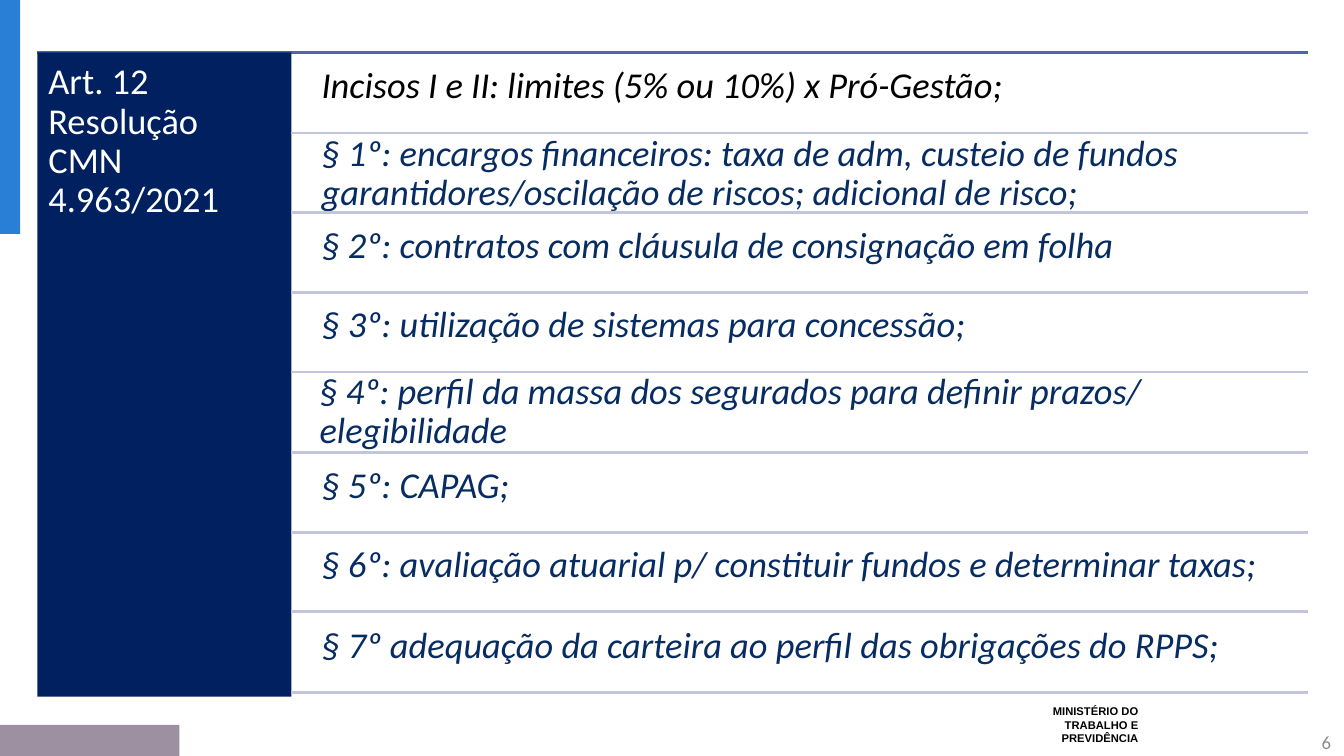
"""Slide on Art. 12 of Resolução CMN 4.963/2021 and its paragraphs."""
import pptx
import pptx.util
import pptx.dml.color
import pptx.enum.shapes
import pptx.enum.text
import lxml.etree

PX = 9144
ALIGN = pptx.enum.text.PP_ALIGN
ANCHOR = pptx.enum.text.MSO_ANCHOR
COLORS = {
    "blue": "297FD5",
    "mauve": "9D90A0",
    "navy": "002060",
    "ink": "072C62",
    "rule": "4A66AC",
    "divider": "C1C6DB",
    "gray": "8C8C8C",
    "black": "000000",
    "white": "FFFFFF",
}
COLORS = {k: pptx.dml.color.RGBColor.from_string(v) for k, v in COLORS.items()}

prs = pptx.Presentation()
prs.slide_width = 1333 * PX
prs.slide_height = 750 * PX
s = prs.slides.add_slide(prs.slide_layouts[6])


def write(sp, lines, size, color, font="Calibri", align=ALIGN.LEFT,
          anchor=ANCHOR.TOP, inset=None, spacing=None, bold=False, italic=False):
    tf = sp.text_frame
    tf.word_wrap = True
    tf.vertical_anchor = anchor
    if inset is not None:
        tf.margin_left = tf.margin_top = tf.margin_right = tf.margin_bottom = inset * PX
    tf.text = "\n".join(lines)
    for p in tf.paragraphs:
        p.alignment = align
        p.line_spacing = spacing
        p.font.name = font
        p.font.size = pptx.util.Pt(size)
        p.font.bold = bold
        p.font.italic = italic
        p.font.color.rgb = COLORS[color]


def add_line(x1, x2, y, color):
    c = s.shapes.add_connector(pptx.enum.shapes.MSO_CONNECTOR.STRAIGHT,
                               x1 * PX, y * PX, x2 * PX, y * PX)
    c.line.color.rgb = COLORS[color]
    c.line.width = pptx.util.Pt(2)
    lxml.etree.SubElement(c.element.spPr, pptx.oxml.ns.qn("a:effectLst"))


add_line(37, 1297, 52, "rule")

bars = [
    (0, 0, 20, 232, "blue"),
    (0, 719, 178, 31, "mauve"),
    (37, 52, 252, 639, "navy"),
]
for x, y, w, h, color in bars:
    sp = s.shapes.add_shape(pptx.enum.shapes.MSO_SHAPE.RECTANGLE,
                            x * PX, y * PX, w * PX, h * PX)
    sp.shadow.inherit = False
    sp.fill.solid()
    sp.fill.fore_color.rgb = COLORS[color]
    sp.line.fill.background()
write(sp, ["Art. 12 Resolução CMN 4.963/2021"], 26, "white", inset=11, spacing=0.9)

rows = [
    ("Incisos I e II: limites (5% ou 10%) x Pró-Gestão;", "black", 0, 0),
    ("§ 1º: encargos financeiros: taxa de adm, custeio de fundos "
     "garantidores/oscilação de riscos; adicional de risco;", "ink", 0, -12),
    ("§ 2º: contratos com cláusula de consignação em folha", "ink", 0, 0),
    ("§ 3º: utilização de sistemas para concessão;", "ink", 0, 0),
    ("§ 4º: perfil da massa dos segurados para definir prazos/ elegibilidade",
     "ink", -2, -14),
    ("§ 5º: CAPAG;", "ink", 0, 0),
    ("§ 6º: avaliação atuarial p/ constituir fundos e determinar taxas;", "ink", 0, 0),
    ("§ 7º adequação da carteira ao perfil das obrigações do RPPS;", "ink", 0, 0),
]
for i, (text, color, dx, dy) in enumerate(rows):
    top = 56 + i * 555 // 7
    sp = s.shapes.add_textbox((308 + dx) * PX, (top + dy) * PX, 989 * PX, 76 * PX)
    write(sp, [text], 26, color, inset=11, spacing=0.9, italic=True)
    add_line(289, 1297, top + 76, "divider")

sp = s.shapes.add_textbox(985 * PX, 694 * PX, 154 * PX, 50 * PX)
write(sp, ["MINISTÉRIO DO", "TRABALHO E PREVIDÊNCIA"], 8, "black",
      font="Arial", align=ALIGN.RIGHT, bold=True)

sp = s.shapes.add_textbox(1264 * PX, 716 * PX, 66 * PX, 40 * PX)
write(sp, ["6"], 13.3, "gray", align=ALIGN.RIGHT, anchor=ANCHOR.MIDDLE)

prs.save("out.pptx")
